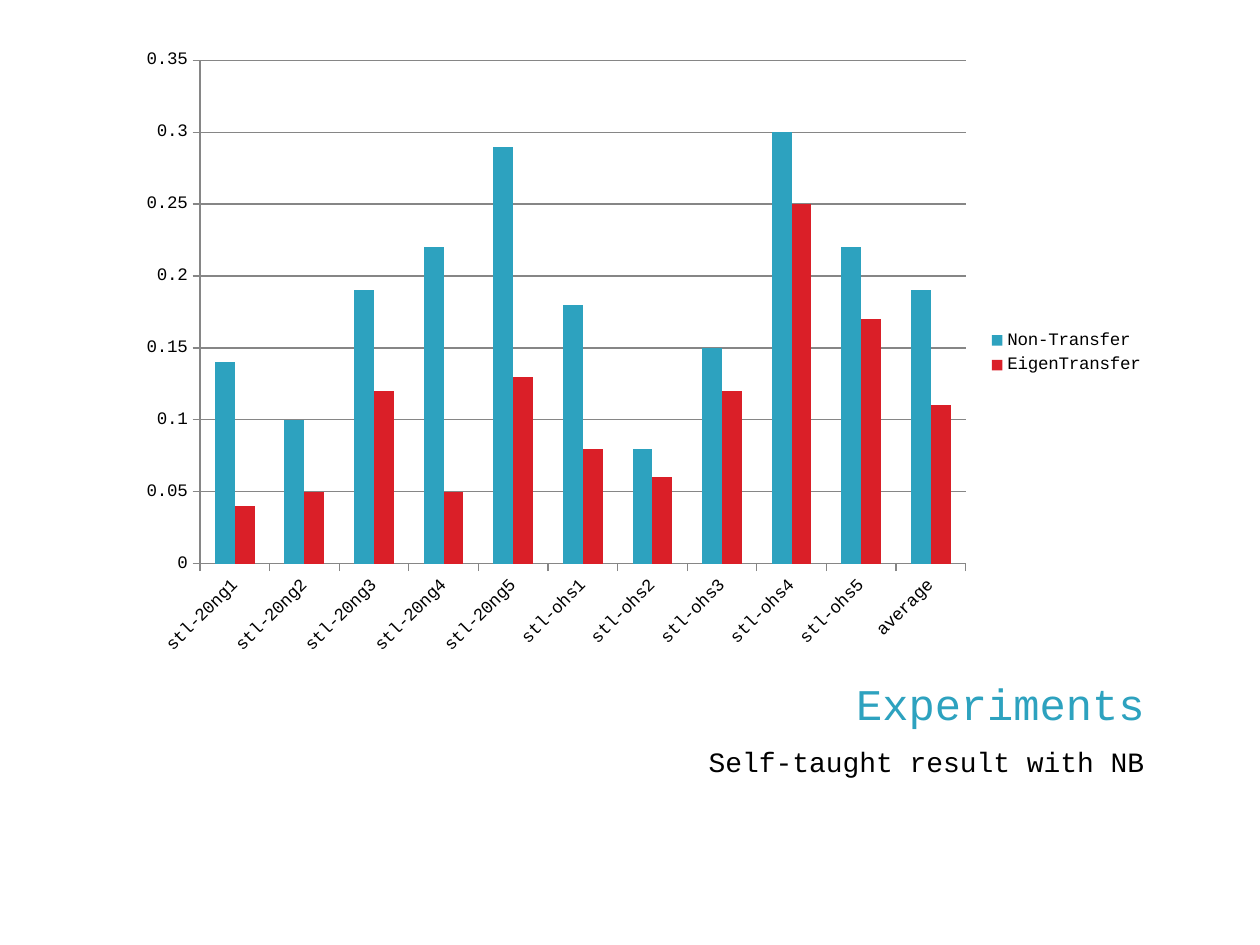
from dataclasses import dataclass

import pptx
import pptx.chart.data
import pptx.dml.color
import pptx.enum.chart
import pptx.enum.text
import pptx.util

Pt = pptx.util.Pt
RGB = pptx.dml.color.RGBColor


@dataclass(frozen=True)
class Theme:
    """Colours, font, type sizes and text inset of the slide."""
    accent: RGB = RGB.from_string("2DA2BF")
    contrast: RGB = RGB.from_string("DA1F28")
    ink: RGB = RGB.from_string("000000")
    rule: RGB = RGB.from_string("868686")
    font: str = "Courier New"
    title_size: float = 25
    subtitle_size: float = 16
    chart_size: float = 10
    inset: float = 3.6


THEME = Theme()
CATEGORIES = (
    [f"stl-20ng{number}" for number in range(1, 6)]
    + [f"stl-ohs{number}" for number in range(1, 6)]
    + ["average"]
)
RESULTS = {
    "Non-Transfer": (0.14, 0.1, 0.19, 0.22, 0.29, 0.18, 0.08, 0.15, 0.3, 0.22, 0.19),
    "EigenTransfer": (0.04, 0.05, 0.12, 0.05, 0.13, 0.08, 0.06, 0.12, 0.25, 0.17, 0.11),
}


def style_font(font, size, color):
    """Apply the theme font with the given size and colour."""
    font.name = THEME.font
    font.size = Pt(size)
    font.bold = False
    font.color.rgb = color


def style_rule(line):
    """Draw an axis or grid line in the theme's grey."""
    line.color.rgb = THEME.rule
    line.width = Pt(0.75)


def add_results_chart(slide, left, top, width, height):
    """Place the clustered column chart in the given box."""
    data = pptx.chart.data.CategoryChartData()
    data.categories = CATEGORIES
    for name, values in RESULTS.items():
        data.add_series(name, values)
    chart = slide.shapes.add_chart(
        pptx.enum.chart.XL_CHART_TYPE.COLUMN_CLUSTERED,
        Pt(left), Pt(top), Pt(width), Pt(height), data,
    ).chart
    style_font(chart.font, THEME.chart_size, THEME.ink)
    chart.has_title = False
    chart.has_legend = True
    chart.legend.position = pptx.enum.chart.XL_LEGEND_POSITION.RIGHT
    chart.legend.include_in_layout = False

    columns = chart.plots[0]
    columns.vary_by_categories = False
    columns.gap_width = 150
    columns.overlap = 0
    for series, color in zip(columns.series, (THEME.accent, THEME.contrast)):
        series.format.fill.solid()
        series.format.fill.fore_color.rgb = color

    for axis in (chart.category_axis, chart.value_axis):
        axis.major_tick_mark = pptx.enum.chart.XL_TICK_MARK.OUTSIDE
        axis.minor_tick_mark = pptx.enum.chart.XL_TICK_MARK.NONE
        style_font(axis.tick_labels.font, THEME.chart_size, THEME.ink)
        style_rule(axis.format.line)
    chart.category_axis._element.txPr.bodyPr.set("rot", "-2700000")
    scale = chart.value_axis
    scale.minimum_scale, scale.maximum_scale, scale.major_unit = 0, 0.35, 0.05
    scale.tick_labels.number_format = "General"
    scale.tick_labels.number_format_is_linked = False
    scale.has_major_gridlines = True
    style_rule(scale.major_gridlines.format.line)


def add_caption(slide, left, top, width, height, words, size, color, anchor):
    """Place one right-aligned line of text in the given box."""
    frame = slide.shapes.add_textbox(Pt(left), Pt(top), Pt(width), Pt(height)).text_frame
    frame.word_wrap = True
    frame.vertical_anchor = anchor
    frame.margin_top = frame.margin_bottom = Pt(THEME.inset)
    frame.text = words
    line = frame.paragraphs[0]
    line.alignment = pptx.enum.text.PP_ALIGN.RIGHT
    style_font(line.runs[0].font, size, color)


def main():
    """Build and save the slide."""
    deck = pptx.Presentation()
    deck.slide_width, deck.slide_height = Pt(720), Pt(540)
    slide = deck.slides.add_slide(deck.slide_layouts[6])
    anchors = pptx.enum.text.MSO_ANCHOR
    left, right = 72, 661
    subtitle_left = 348
    add_results_chart(slide, left, 21.6, right - left, 360)
    add_caption(slide, left, 384, right - left, 36, "Experiments",
                THEME.title_size, THEME.accent, anchors.BOTTOM)
    add_caption(slide, subtitle_left, 422, right - subtitle_left, 72,
                "Self-taught result with NB",
                THEME.subtitle_size, THEME.ink, anchors.TOP)
    deck.save("out.pptx")


if __name__ == "__main__":
    main()
